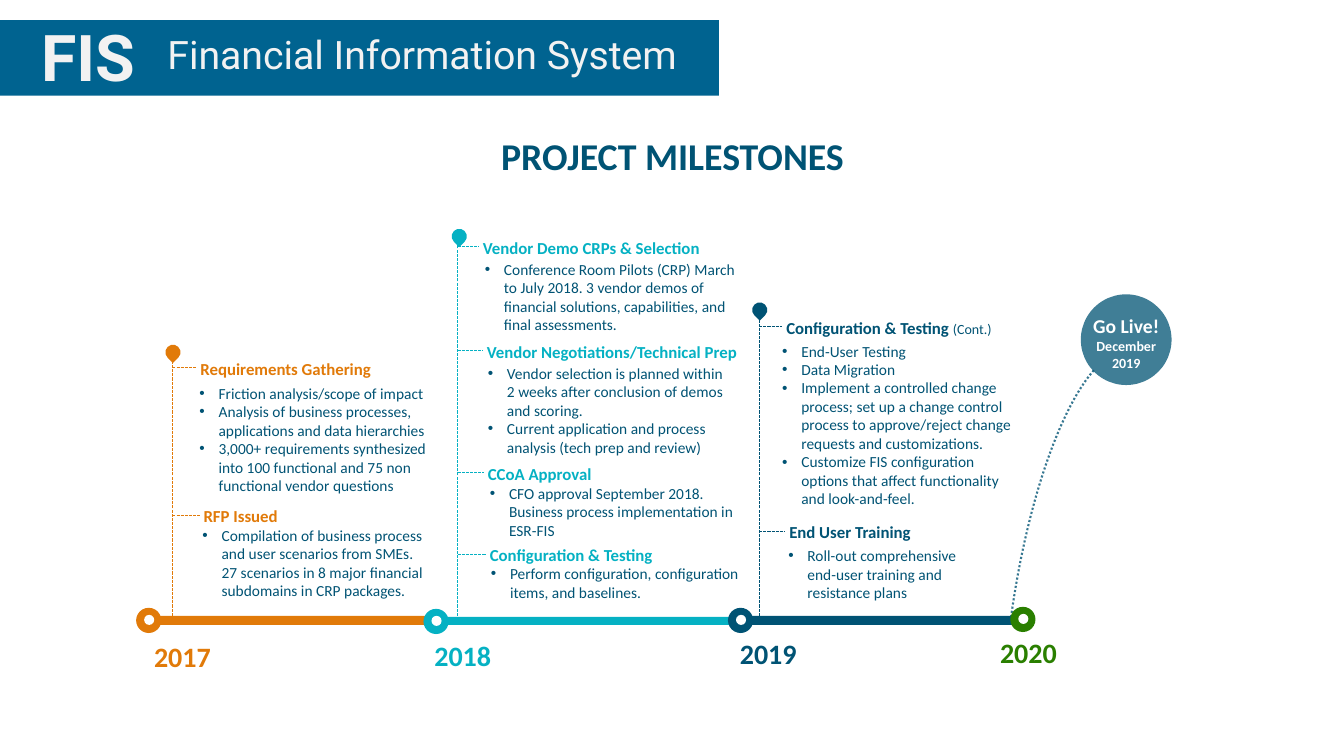
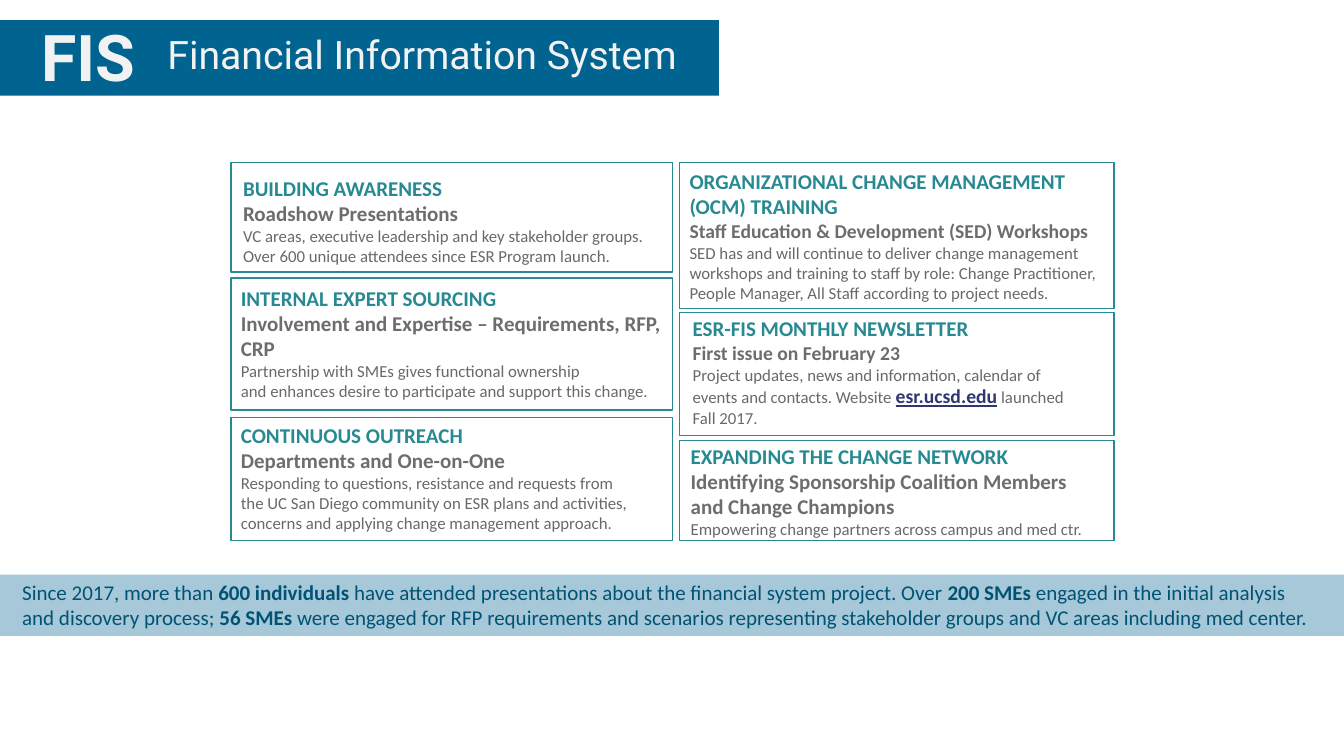
import dataclasses

import pptx
import pptx.dml.color
import pptx.enum.dml
import pptx.enum.shapes
import pptx.enum.text
import pptx.oxml.ns
import pptx.util
from lxml import etree

SHAPES = pptx.enum.shapes.MSO_SHAPE
DASHES = pptx.enum.dml.MSO_LINE
ALIGN = pptx.enum.text.PP_ALIGN
PX = 9144


@dataclasses.dataclass(frozen=True)
class Theme:
    body_font: str = "Calibri"
    header_font: str = "Roboto"
    white: str = "FFFFFF"
    header_text: str = "F2F2F2"
    band: str = "006390"
    navy: str = "005374"
    orange: str = "E17A09"
    cyan: str = "05B1C3"
    green: str = "2A7F00"
    teal: str = "278991"
    subtitle: str = "6D6D6D"
    body: str = "696969"
    link: str = "2E3772"
    acronym_size: int = 46
    header_size: int = 28
    heading_size: int = 27
    year_size: int = 20
    panel_size: int = 15
    subtitle_size: int = 14
    milestone_size: int = 12
    list_size: int = 11
    small_size: int = 10


THEME = Theme()


@dataclasses.dataclass(frozen=True)
class Year:
    label: str
    color: str
    node: tuple
    label_at: tuple
    bar: tuple = ()
    pin: tuple = ()
    spine: int = 0
    milestones: tuple = ()


YEARS = (
    Year("2017", THEME.orange, (135, 603), (143, 630), (158, 611, 264, 9), (164, 342), 171, (
        ((189, 351, 194, 30), "Requirements Gathering", (188, 376, 247, 139), (
            "Friction analysis/scope of impact",
            "Analysis of business processes, applications and data hierarchies",
            "3,000+ requirements synthesized into 100 functional and 75 non functional vendor questions",
        )),
        ((192, 497, 265, 30), "RFP Issued", (191, 517, 244, 84), (
            "Compilation of business process and user scenarios from SMEs. "
            "27 scenarios in 8 major financial subdomains in CRP packages.",
        )),
    )),
    Year("2018", THEME.cyan, (420, 604), (421, 629), (442, 612, 284, 8), (448, 227), 454, (
        ((469, 231, 273, 30), "Vendor Demo CRPs & Selection", (471, 253, 276, 84), (
            "Conference Room Pilots (CRP) March to July 2018. 3 vendor demos of "
            "financial solutions, capabilities, and final assessments.",
        )),
        ((473, 334, 283, 30), "Vendor Negotiations/Technical Prep", (474, 356, 257, 103), (
            "Vendor selection is planned within 2 weeks after conclusion of demos and scoring.",
            "Current application and process analysis (tech prep and review)",
        )),
        ((474, 455, 227, 30), "CCoA Approval", (476, 475, 272, 66), (
            "CFO approval September 2018. Business process implementation in ESR-FIS",
        )),
        ((476, 536, 227, 30), "Configuration & Testing", (477, 555, 273, 47), (
            "Perform configuration, configuration items, and baselines.",
        )),
    )),
    Year("2019", THEME.navy, (722, 603), (724, 627), (742, 611, 264, 9), (746, 300), 753, (
        ((770, 310, 241, 30),
         [("Configuration & Testing ", {}),
          ("(Cont.)", {"size": THEME.small_size, "bold": False})],
         (766, 334, 256, 213), (
            "End-User Testing",
            "Data Migration",
            "Implement a controlled change process; set up a change control process "
            "to approve/reject change requests and customizations.",
            "Customize FIS configuration options that affect functionality and look-and-feel.",
        )),
        ((773, 513, 176, 30), "End User Training", (772, 537, 214, 66), (
            "Roll-out comprehensive end-user training and resistance plans",
        )),
    )),
    Year("2020", THEME.green, (1002, 602), (982, 626)),
)

PANELS = (
    ((229, 161, 438, 109), (12, 13, 23, 0), "BUILDING AWARENESS",
     "Roadshow Presentations", THEME.panel_size,
     ["VC areas, executive leadership and key stakeholder groups. "
      "Over 600 unique attendees since ESR Program launch."]),
    ((229, 276, 438, 131), (10, 7, 0, 0), "INTERNAL EXPERT SOURCING",
     "Involvement and Expertise – Requirements, RFP, CRP", THEME.panel_size,
     ["Partnership with SMEs gives functional ownership",
      "and enhances desire to participate and support this change."]),
    ((229, 414, 438, 122), (10, 5, 43, 0), "CONTINUOUS OUTREACH",
     "Departments and One-on-One", THEME.panel_size,
     ["Responding to questions, resistance and requests from the UC San Diego community "
      "on ESR plans and activities, concerns and applying change management approach."]),
    ((674, 161, 431, 145), (10, 6, 11, 0), "ORGANIZATIONAL CHANGE MANAGEMENT (OCM) TRAINING",
     "Staff Education & Development (SED) Workshops", THEME.subtitle_size,
     ["SED has and will continue to deliver change management workshops and training to staff "
      "by role: Change Practitioner, People Manager, All Staff according to project needs."]),
    ((674, 310, 431, 122), (13, 3, 44, 0), "ESR-FIS MONTHLY NEWSLETTER",
     "First issue on February 23", THEME.subtitle_size,
     [[("Project updates, news and information, calendar of events and contacts. Website ", {}),
       ("esr.ucsd.edu", {"size": THEME.subtitle_size, "color": THEME.link,
                         "bold": True, "underline": True}),
       (" launched Fall 2017.", {})]]),
    ((674, 437, 431, 99), (11, 3, 11, 0), "EXPANDING THE CHANGE NETWORK",
     "Identifying Sponsorship Coalition Members and Change Champions", THEME.panel_size,
     ["Empowering change partners across campus and med ctr."]),
)


def px(*lengths):
    return [pptx.util.Emu(length * PX) for length in lengths]


def rgb(color):
    return pptx.dml.color.RGBColor.from_string(color)


def set_opacity(shape, percent):
    color = next(shape.element.iter(pptx.oxml.ns.qn("a:srgbClr")))
    etree.SubElement(color, pptx.oxml.ns.qn("a:alpha"), val=str(percent * 1000))


def add_bullet(paragraph, indent=19):
    properties = paragraph._p.get_or_add_pPr()
    properties.set("marL", str(indent * PX))
    properties.set("indent", str(-indent * PX))
    etree.SubElement(properties, pptx.oxml.ns.qn("a:buFont"), typeface="Arial")
    etree.SubElement(properties, pptx.oxml.ns.qn("a:buChar"), char="•")


def add_run(paragraph, text, size, color, bold=False, underline=False, font=THEME.body_font):
    run = paragraph.add_run()
    run.text = text
    run.font.size = pptx.util.Pt(size)
    run.font.color.rgb = rgb(color)
    run.font.bold = bold
    run.font.underline = underline
    run.font.name = font


def write(shape, paragraphs, align=ALIGN.LEFT, bullet=False, insets=(10, 5, 10, 5), **style):
    frame = shape.text_frame
    frame.word_wrap = True
    frame.auto_size = pptx.enum.text.MSO_AUTO_SIZE.NONE
    frame.vertical_anchor = pptx.enum.text.MSO_ANCHOR.TOP
    frame.margin_left, frame.margin_top, frame.margin_right, frame.margin_bottom = px(*insets)
    for index, content in enumerate(paragraphs):
        paragraph = frame.add_paragraph() if index else frame.paragraphs[0]
        paragraph.alignment = align
        if bullet:
            add_bullet(paragraph)
        runs = [(content, {})] if isinstance(content, str) else content
        for text, changes in runs:
            add_run(paragraph, text, **{**style, **changes})


def add_text(slide, box, paragraphs, **style):
    shape = slide.shapes.add_textbox(*px(*box))
    write(shape, paragraphs, **style)
    return shape


def add_shape(slide, kind, box, fill=None, opacity=100, rotation=0):
    shape = slide.shapes.add_shape(kind, *px(*box))
    shape.shadow.inherit = False
    shape.rotation = rotation
    shape.line.fill.background()
    if fill:
        shape.fill.solid()
        shape.fill.fore_color.rgb = rgb(fill)
    else:
        shape.fill.background()
    if opacity < 100:
        set_opacity(shape, opacity)
    return shape


def format_line(line, color, width, dash=None):
    line.color.rgb = rgb(color)
    line.width = pptx.util.Pt(width)
    if dash:
        line.dash_style = dash


def add_dashed_line(slide, start, end, color):
    connector = slide.shapes.add_connector(
        pptx.enum.shapes.MSO_CONNECTOR.STRAIGHT, *px(*start, *end))
    format_line(connector.line, color, 0.75, DASHES.SQUARE_DOT)
    etree.SubElement(connector.element.spPr, pptx.oxml.ns.qn("a:effectLst"))


def add_header_to_layout(slide):
    band = add_shape(slide, SHAPES.RECTANGLE, (0, 20, 713, 75), THEME.band)
    acronym = add_text(slide, (31, 7, 142, 101), ["FIS"], size=THEME.acronym_size,
                       color=THEME.header_text, bold=True, font=THEME.header_font,
                       insets=(10, 10, 10, 5))
    for shape in (band, acronym):
        slide.slide_layout.shapes.element.append(shape.element)


def add_title(slide):
    title = slide.shapes.title
    title.left, title.top, title.width, title.height = px(156, 25, 642, 64)
    write(title, ["Financial Information System"], size=THEME.header_size,
          color=THEME.header_text, font=THEME.header_font)


def add_milestone(slide, year, heading_box, heading, list_box, items):
    left, top = heading_box[:2]
    add_dashed_line(slide, (year.spine, top + 14), (left + 6, top + 14), year.color)
    add_text(slide, heading_box, [heading], size=THEME.milestone_size,
             color=year.color, bold=True)
    add_text(slide, list_box, items, size=THEME.list_size, color=THEME.navy, bullet=True)


def add_year(slide, year):
    left, top = year.node
    if year.bar:
        add_shape(slide, SHAPES.RECTANGLE, year.bar, year.color)
        add_dashed_line(slide, (year.spine, 615), (year.spine, year.pin[1] + 16), year.color)
        add_shape(slide, SHAPES.TEAR, (*year.pin, 15, 15), year.color, rotation=135)
    add_shape(slide, SHAPES.FLOWCHART_CONNECTOR, (left, top, 25, 25), year.color)
    add_shape(slide, SHAPES.FLOWCHART_CONNECTOR, (left + 8, top + 7, 10, 10), THEME.white)
    add_text(slide, (*year.label_at, 216, 44), [year.label], size=THEME.year_size,
             color=year.color, bold=True)
    for milestone in year.milestones:
        add_milestone(slide, year, *milestone)


def add_go_live(slide):
    arc = add_shape(slide, SHAPES.ARC, (802, 545, 563, 164), rotation=277.6)
    arc.adjustments[0] = 162
    arc.adjustments[1] = 211.65
    format_line(arc.line, THEME.navy, 1.5, DASHES.ROUND_DOT)
    set_opacity(arc, 79)
    add_shape(slide, SHAPES.FLOWCHART_CONNECTOR, (1072, 292, 90, 90), THEME.navy, opacity=75)
    add_text(slide, (1064, 307, 106, 67),
             ["Go Live!", [("December 2019", {"size": THEME.small_size})]],
             size=THEME.subtitle_size, color=THEME.white, bold=True, align=ALIGN.CENTER)


def add_panel(slide, box, insets, heading, subtitle, subtitle_size, details):
    panel = add_shape(slide, SHAPES.RECTANGLE, box)
    format_line(panel.line, THEME.teal, 1)
    strong = {"size": THEME.panel_size, "color": THEME.teal, "bold": True}
    second = {"size": subtitle_size, "color": THEME.subtitle, "bold": True}
    write(panel, [[(heading, strong)], [(subtitle, second)], *details],
          size=THEME.milestone_size, color=THEME.body, insets=insets)


def add_summary(slide):
    strong = {"bold": True}
    band = add_shape(slide, SHAPES.RECTANGLE, (0, 570, 1333, 61), THEME.band, opacity=35)
    write(band, [[
        ("Since 2017, more than ", {}),
        ("600 individuals ", strong),
        ("have attended presentations about the financial system project. Over ", {}),
        ("200 SMEs ", strong),
        ("engaged in the initial analysis and discovery process; ", {}),
        ("56 SMEs ", strong),
        ("were engaged for RFP requirements and scenarios representing stakeholder groups "
         "and VC areas including med center.", {}),
    ]], size=THEME.panel_size, color=THEME.navy, insets=(22, 5, 22, 5))


def main():
    presentation = pptx.Presentation()
    presentation.slide_width, presentation.slide_height = px(1333, 750)
    layout = presentation.slide_layouts[5]

    milestones = presentation.slides.add_slide(layout)
    add_header_to_layout(milestones)
    add_title(milestones)
    add_text(milestones, (448, 127, 438, 56), ["PROJECT MILESTONES"],
             size=THEME.heading_size, color=THEME.navy, bold=True, align=ALIGN.CENTER)
    add_go_live(milestones)
    for year in YEARS:
        add_year(milestones, year)

    outreach = presentation.slides.add_slide(layout)
    add_title(outreach)
    for panel in PANELS:
        add_panel(outreach, *panel)
    add_summary(outreach)

    presentation.save("out.pptx")


if __name__ == "__main__":
    main()
